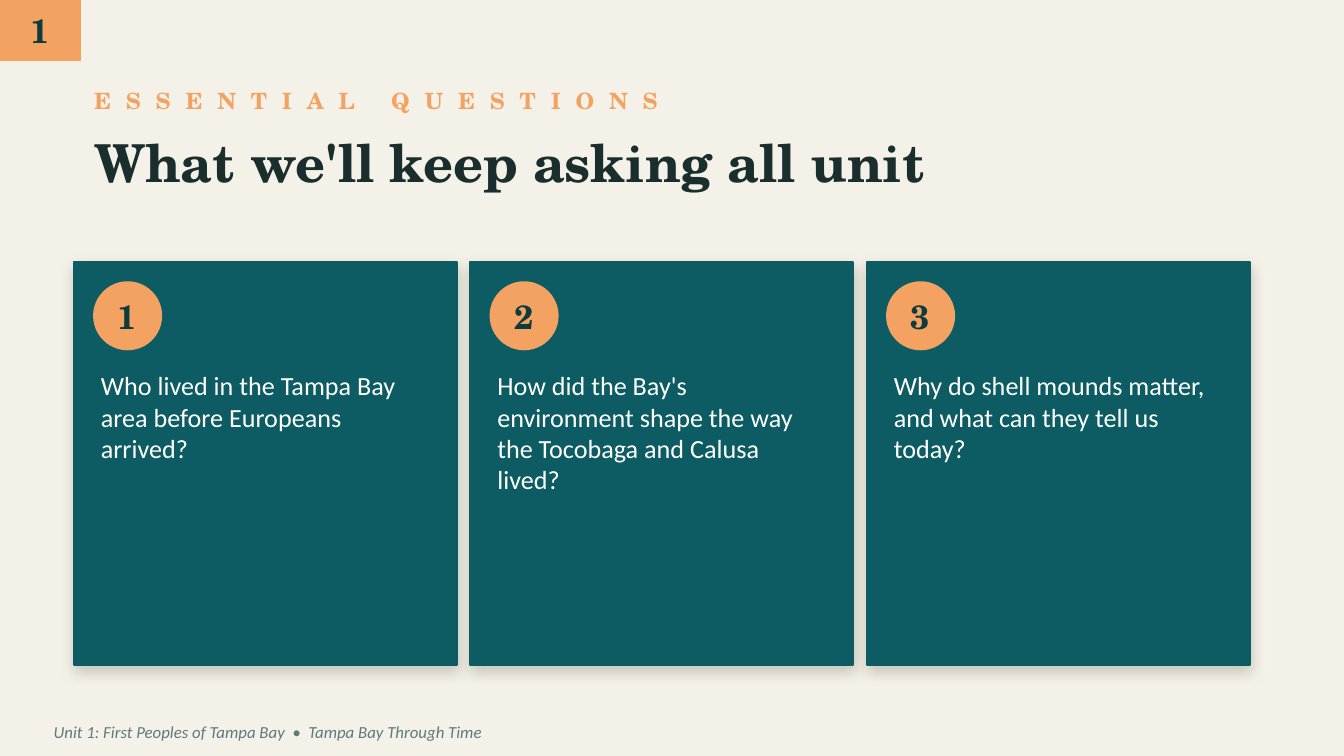
import pptx
import pptx.dml.color
import pptx.enum.shapes
import pptx.enum.text
import pptx.oxml
import pptx.oxml.ns
import pptx.util

PX = 4572
SERIF, SANS = "TeX Gyre Schola", "Calibri"
CREAM, SAND, TEAL = "F4F1E8", "F4A261", "0D5C63"
DARK, INK, GREY, WHITE = "0D3B40", "1A2E2E", "5D7A7C", "FFFFFF"
SHAPE = pptx.enum.shapes.MSO_SHAPE
ALIGN = pptx.enum.text.PP_ALIGN
ANCHOR = pptx.enum.text.MSO_ANCHOR

ASKS = [
    "Who lived in the Tampa Bay area before Europeans arrived?",
    "How did the Bay's environment shape the way the Tocobaga and Calusa lived?",
    "Why do shell mounds matter, and what can they tell us today?",
]


def paint(part, code):
    """Give a fill or font colour its hex value."""
    part.rgb = pptx.dml.color.RGBColor.from_string(code)


def scale(*box):
    """Turn px lengths into EMU."""
    return [pptx.util.Emu(n * PX) for n in box]


def write(shape, words, size, face, code, bold=False, slant=False,
          align=ALIGN.LEFT, anchor=ANCHOR.MIDDLE, space=0):
    """Write one run of text into a shape without margins."""
    frame = shape.text_frame
    frame.word_wrap = True
    frame.vertical_anchor = anchor
    frame.margin_left = frame.margin_right = 0
    frame.margin_top = frame.margin_bottom = 0
    para = frame.paragraphs[0]
    para.alignment = align
    run = para.add_run()
    run.text = words
    font = run.font
    font.size, font.name = pptx.util.Pt(size), face
    font.bold, font.italic = bold, slant
    paint(font.color, code)
    if space:
        font._element.set("spc", str(space * 100))


def label(slide, box, words, size, face, code, **style):
    """Add a text box."""
    text = slide.shapes.add_textbox(*scale(*box))
    write(text, words, size, face, code, **style)


def block(slide, kind, box, code):
    """Add a flat shape with fill and outline of one colour."""
    shape = slide.shapes.add_shape(kind, *scale(*box))
    shape.shadow.inherit = False
    shape.fill.solid()
    paint(shape.fill.fore_color, code)
    paint(shape.line.color, code)
    shape.line.width = pptx.util.Pt(1)
    return shape


def badge(slide, kind, box, num):
    """Add a sand shape that holds a number."""
    shape = block(slide, kind, box, SAND)
    write(shape, str(num), 18, SERIF, DARK, bold=True, align=ALIGN.CENTER)


def shade(shape):
    """Drop a soft shadow straight below a shape."""
    blur, drop = pptx.util.Pt(8), pptx.util.Pt(3)
    glow = pptx.oxml.parse_xml(
        f'<a:outerShdw {pptx.oxml.ns.nsdecls("a")} blurRad="{blur}" '
        f'dist="{drop}" dir="5400000" algn="bl" rotWithShape="0">'
        '<a:srgbClr val="000000"><a:alpha val="18000"/></a:srgbClr>'
        '</a:outerShdw>')
    shape._element.spPr.find(pptx.oxml.ns.qn("a:effectLst")).append(glow)


def head(slide, box):
    """Place the kicker and the title."""
    x, y, w, h = box
    label(slide, (x, y, w, 80), "ESSENTIAL QUESTIONS", 12, SERIF, SAND,
          bold=True, space=8)
    label(slide, (x, y + 80, w, h - 80), "What we'll keep asking all unit",
          28, SERIF, INK, bold=True)


def card(slide, box, num, ask):
    """Place one numbered question card."""
    x, y, w, h = box
    shade(block(slide, SHAPE.RECTANGLE, box, TEAL))
    badge(slide, SHAPE.OVAL, (x + 30, y + 30, 100, 100), num)
    label(slide, (x + 40, y + 160, w - 80, h - 190), ask, 14, SANS, WHITE,
          anchor=ANCHOR.TOP)


def cards(slide, box, gap):
    """Share the row among the question cards."""
    x, y, w, h = box
    wide = (w - gap * (len(ASKS) - 1)) // len(ASKS)
    for i, ask in enumerate(ASKS):
        card(slide, (x + i * (wide + gap), y, wide, h), i + 1, ask)


def foot(slide, box):
    """Place the footer line."""
    label(slide, box,
          "Unit 1: First Peoples of Tampa Bay  •  Tampa Bay Through Time",
          9, SANS, GREY, slant=True)


def main():
    """Build and save the slide."""
    deck = pptx.Presentation()
    deck.slide_width, deck.slide_height = scale(2000, 1125)
    slide = deck.slides.add_slide(deck.slide_layouts[6])
    slide.background.fill.solid()
    paint(slide.background.fill.fore_color, CREAM)
    badge(slide, SHAPE.RECTANGLE, (0, 0, 120, 90), 1)
    head(slide, (140, 110, 1720, 180))
    cards(slide, (110, 390, 1750, 600), 20)
    foot(slide, (80, 1064, 1840, 50))
    deck.save("out.pptx")


if __name__ == "__main__":
    main()
